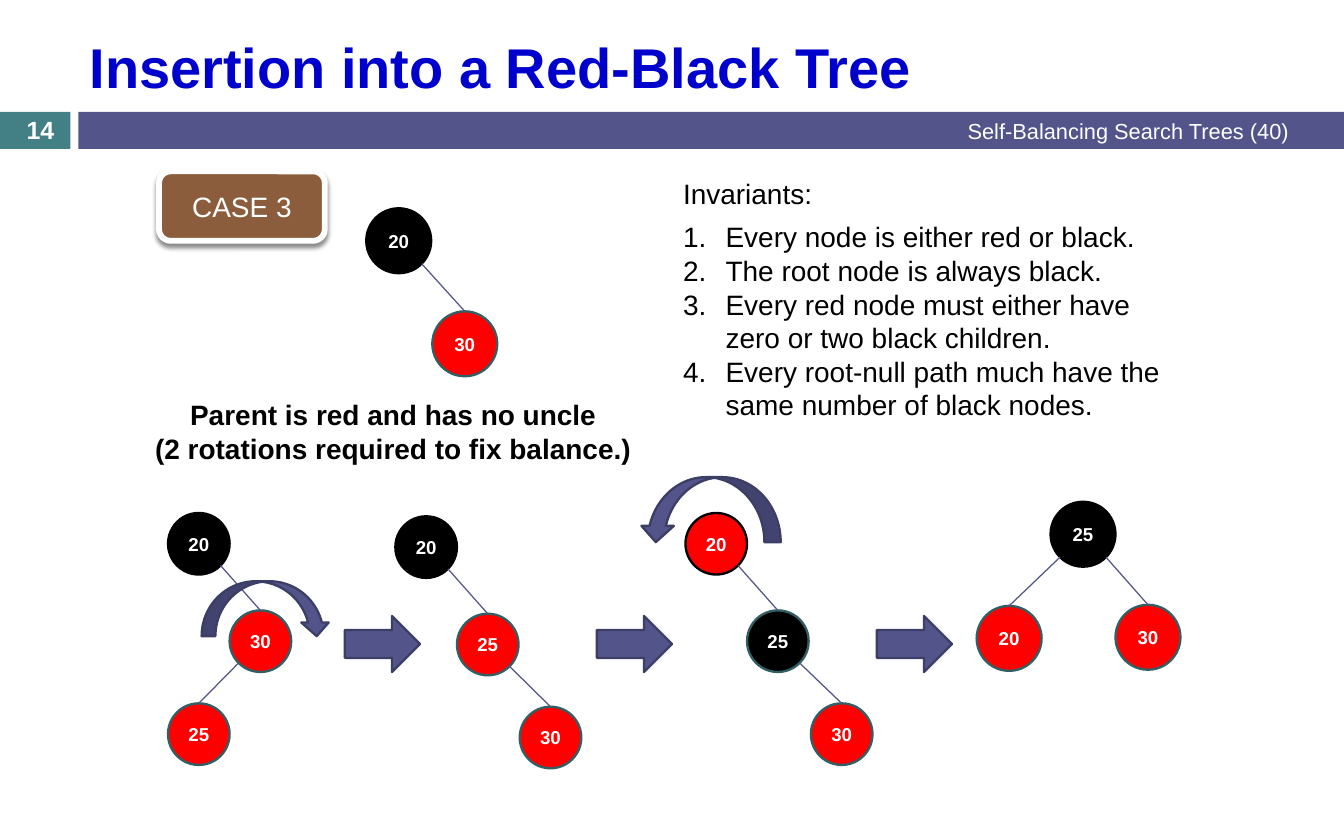
from dataclasses import dataclass
from math import sqrt
from typing import Optional

from lxml.etree import SubElement
from pptx import Presentation
from pptx.dml.color import RGBColor
from pptx.enum.shapes import MSO_CONNECTOR as Connector, MSO_SHAPE as Shape
from pptx.enum.text import MSO_ANCHOR as Anchor, MSO_AUTO_SIZE as AutoSize, PP_ALIGN as Align
from pptx.oxml.ns import qn
from pptx.util import Inches, Pt

COLORS = {
    "black": "000000", "white": "FFFFFF", "red": "FF0000", "title": "0000CC",
    "teal": "438086", "dark_teal": "325F63", "indigo": "53548A",
    "dark_indigo": "3D3E66", "brown": "8B5D3D",
}
FONT = "Arial"


@dataclass
class Node:
    """A tree node, offset from the tree's corner."""
    label: str
    dx: float
    dy: float
    fill: str = "red"
    line: str = "dark_teal"
    parent: Optional[int] = None


@dataclass
class Tree:
    left: float
    top: float
    size: float
    nodes: list[Node]


@dataclass
class Rotation:
    left: float
    top: float
    width: float
    height: float
    clockwise: bool


def rgb(name: str) -> RGBColor:
    return RGBColor.from_string(COLORS[name])


def write(tf, text: str, *, size=18, color="black", bold=False,
          align=Align.LEFT, anchor=Anchor.MIDDLE) -> None:
    """Fill a text frame, one paragraph to each line of text."""
    tf.word_wrap = True
    tf.auto_size = AutoSize.NONE
    tf.vertical_anchor = anchor
    for i, line in enumerate(text.split("\n")):
        p = tf.add_paragraph() if i else tf.paragraphs[0]
        p.alignment = align
        r = p.add_run()
        r.text = line
        r.font.name, r.font.size, r.font.bold = FONT, Pt(size), bold
        r.font.color.rgb = rgb(color)


def add_text(s, box: tuple, text: str, **fmt):
    sp = s.shapes.add_textbox(*map(Inches, box))
    write(sp.text_frame, text, **fmt)
    return sp


def add_box(s, kind, box: tuple, fill: str, line: Optional[str] = None, width=1.5):
    sp = s.shapes.add_shape(kind, *map(Inches, box))
    sp.shadow.inherit = False
    sp.fill.solid()
    sp.fill.fore_color.rgb = rgb(fill)
    if line:
        sp.line.color.rgb = rgb(line)
        sp.line.width = Pt(width)
    else:
        sp.line.fill.background()
    return sp


def add_edge(s, parent, child) -> None:
    """Join the parent's lower diagonal point to the top of the child."""
    radius = parent.width / 2
    reach = radius / sqrt(2)
    side = 1 if child.left > parent.left else -1
    start_x = int(parent.left + radius + side * reach)
    start_y = int(parent.top + radius + reach)
    c = s.shapes.add_connector(Connector.STRAIGHT, start_x, start_y,
                               child.left + child.width // 2, child.top)
    c.end_connect(child, 0)
    c.line.color.rgb = rgb("indigo")
    c.line.width = Pt(0.79)
    SubElement(c._element.spPr, qn("a:effectLst"))


def add_tree(s, tree: Tree) -> None:
    drawn = []
    for node in tree.nodes:
        box = (tree.left + node.dx, tree.top + node.dy, tree.size, tree.size)
        sp = add_box(s, Shape.OVAL, box, node.fill, node.line)
        tf = sp.text_frame
        tf.margin_left = tf.margin_right = 0
        write(tf, node.label, size=12, color="white", bold=True, align=Align.CENTER)
        if node.parent is not None:
            add_edge(s, drawn[node.parent], sp)
        drawn.append(sp)


def add_rotation(s, rot: Rotation) -> None:
    sp = add_box(s, Shape.CURVED_UP_ARROW, (rot.left, rot.top, rot.width, rot.height),
                 "indigo", "dark_indigo")
    sp.rotation = 180
    if rot.clockwise:
        sp._element.spPr.find(qn("a:xfrm")).set("flipH", "1")


def add_shadow(sp) -> None:
    effects = sp._element.spPr.find(qn("a:effectLst"))
    shadow = SubElement(effects, qn("a:outerShdw"), blurRad=str(Pt(3)),
                        dist=str(Pt(2.4)), dir="5400000", rotWithShape="0")
    color = SubElement(shadow, qn("a:srgbClr"), val=COLORS["black"])
    SubElement(color, qn("a:alpha"), val="45000")


def number(p) -> None:
    pPr = p._p.get_or_add_pPr()
    pPr.set("marL", str(Inches(0.38)))
    pPr.set("indent", str(-Inches(0.38)))
    SubElement(pPr, qn("a:buFont"), typeface="+mj-lt")
    SubElement(pPr, qn("a:buAutoNum"), type="arabicPeriod")


TREES = [
    # Starting tree
    Tree(3.27, 1.86, 0.58, [Node("20", 0, 0, "black", "black"),
                            Node("30", 0.59, 0.92, parent=0)]),
    # Insertion and the two rotations
    Tree(1.5, 4.58, 0.55, [Node("20", 0, 0, "black", "black"),
                           Node("30", 0.55, 0.87, parent=0),
                           Node("25", 0, 1.7, parent=1)]),
    Tree(3.53, 4.61, 0.55, [Node("20", 0, 0, "black", "black"),
                            Node("25", 0.55, 0.87, parent=0),
                            Node("30", 1.11, 1.7, parent=1)]),
    Tree(6.12, 4.58, 0.55, [Node("20", 0, 0, "red", "black"),
                            Node("25", 0.55, 0.87, "black", parent=0),
                            Node("30", 1.12, 1.7, parent=1)]),
    # Balanced result
    Tree(9.38, 4.48, 0.58, [Node("25", 0, 0, "black", "black"),
                            Node("30", 0.58, 0.92, parent=0),
                            Node("20", -0.66, 0.93, parent=0)]),
]
ROTATIONS = [Rotation(1.8, 5.19, 1.15, 0.49, True),
             Rotation(5.71, 4.26, 1.26, 0.58, False)]
STEP_LEFTS = [3.08, 5.33, 7.83]
INVARIANTS = """Invariants:
Every node is either red or black.
The root node is always black.
Every red node must either have zero or two black children.
Every root-null path much have the same number of black nodes."""


def main() -> None:
    prs = Presentation()
    prs.slide_width, prs.slide_height = Inches(12), Inches(7.5)
    s = prs.slides.add_slide(prs.slide_layouts[5])

    # Title and header band
    title = s.shapes.title
    title.left, title.top, title.width, title.height = map(Inches, (0.7, 0.19, 10.91, 0.8))
    write(title.text_frame, "Insertion into a Red-Black Tree", size=36, color="title", bold=True)
    add_box(s, Shape.RECTANGLE, (0, 1, 0.63, 0.33), "teal")
    add_box(s, Shape.RECTANGLE, (0.7, 1, 11.3, 0.33), "indigo")
    add_text(s, (4.5, 0.99, 7.11, 0.35), "Self-Balancing Search Trees (40)",
             size=14, color="white", align=Align.RIGHT)
    add_text(s, (0, 1.01, 0.72, 0.3), "14", size=16, color="white", bold=True, align=Align.CENTER)

    # Case badge and caption
    badge = add_box(s, Shape.ROUNDED_RECTANGLE, (1.42, 1.53, 1.48, 0.62), "brown", "white", 3.75)
    add_shadow(badge)
    write(badge.text_frame, "CASE 3", color="white", align=Align.CENTER)
    add_text(s, (1.25, 3.5, 4.52, 0.71),
             "Parent is red and has no uncle\n(2 rotations required to fix balance.)",
             bold=True, align=Align.CENTER, anchor=Anchor.TOP)

    # Numbered invariants
    rules = add_text(s, (6, 1.53, 4.58, 2.31), INVARIANTS, anchor=Anchor.TOP)
    items = rules.text_frame.paragraphs[1:]
    items[0].space_before = Pt(6)
    for p in items:
        number(p)

    # Trees, rotations and step arrows
    for tree in TREES:
        add_tree(s, tree)
    for rot in ROTATIONS:
        add_rotation(s, rot)
    for left in STEP_LEFTS:
        add_box(s, Shape.RIGHT_ARROW, (left, 5.5, 0.67, 0.5), "indigo", "dark_indigo")

    prs.save("out.pptx")


if __name__ == "__main__":
    main()
